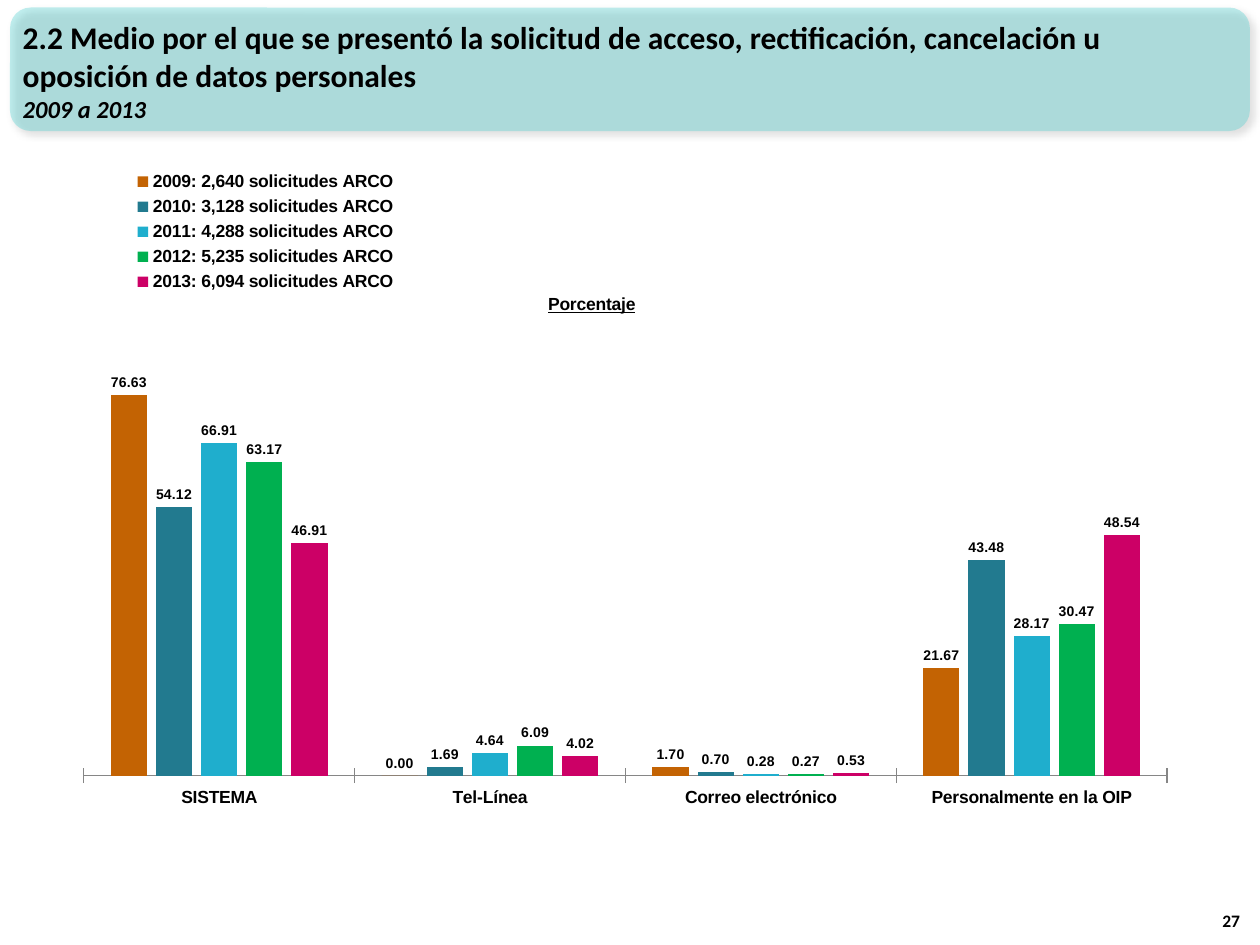
from lxml.etree import SubElement
from pptx import Presentation
from pptx.chart.data import CategoryChartData
from pptx.dml.color import RGBColor
from pptx.enum.chart import XL_CHART_TYPE, XL_LABEL_POSITION, XL_LEGEND_POSITION, XL_TICK_MARK
from pptx.enum.shapes import MSO_SHAPE
from pptx.enum.text import MSO_ANCHOR, PP_ALIGN
from pptx.oxml import parse_xml
from pptx.oxml.ns import nsdecls, qn
from pptx.util import Pt

CATEGORIES = ["SISTEMA", "Tel-Línea", "Correo electrónico", "Personalmente en la OIP"]
SERIES = [
    ("2009: 2,640 solicitudes ARCO", "C36303", (76.63, 0, 1.7, 21.67)),
    ("2010: 3,128 solicitudes ARCO", "227A8F", (54.12, 1.69, 0.7, 43.48)),
    ("2011: 4,288 solicitudes ARCO", "1FAECD", (66.91, 4.64, 0.28, 28.17)),
    ("2012: 5,235 solicitudes ARCO", "00B050", (63.17, 6.09, 0.27, 30.47)),
    ("2013: 6,094 solicitudes ARCO", "CC0066", (46.91, 4.02, 0.53, 48.54)),
]


def rgb(value):
    return RGBColor.from_string(value)


def place(sp, left, top, width, height):
    sp.left, sp.top, sp.width, sp.height = Pt(left), Pt(top), Pt(width), Pt(height)


def set_layout(parent, index, x, y, w=None, h=None, inner=False):
    for old in parent.findall(qn("c:layout")):
        parent.remove(old)
    layout = parse_xml(f"<c:layout {nsdecls('c')}><c:manualLayout/></c:layout>")
    values = [("layoutTarget", "inner" if inner else None), ("xMode", "edge"),
              ("yMode", "edge"), ("x", x), ("y", y), ("w", w), ("h", h)]
    for tag, value in values:
        if value is not None:
            SubElement(layout[0], qn(f"c:{tag}")).set("val", str(value))
    parent.insert(index, layout)


class SlideBuilder:
    text_font = "Calibri"
    chart_font = "Arial"
    ink = "000000"
    axis_color = "868686"
    number_format = "#,##0.00"

    def __init__(self, slide):
        self.s = slide

    def font(self, font, size, name, italic=None, underline=None):
        font.name, font.size, font.bold = name, Pt(size), True
        font.italic, font.underline = italic, underline
        font.color.rgb = rgb(self.ink)

    def panel(self, box, color, opacity):
        sp = self.s.shapes.add_shape(MSO_SHAPE.ROUNDED_RECTANGLE, 0, 0, 0, 0)
        place(sp, *box)
        sp.fill.solid()
        sp.fill.fore_color.rgb = rgb(color)
        sp.line.fill.background()
        fill = sp.element.spPr.find(qn("a:solidFill"))
        SubElement(fill[0], qn("a:alpha")).set("val", str(opacity * 1000))
        sp.element.spPr.append(parse_xml(
            f'<a:effectLst {nsdecls("a")}><a:outerShdw blurRad="{Pt(4)}" dist="{Pt(3)}" '
            f'dir="2700000" algn="tl" rotWithShape="0"><a:srgbClr val="{self.ink}">'
            '<a:alpha val="40000"/></a:srgbClr></a:outerShdw></a:effectLst>'))

    def title(self, box, heading, period):
        sp = self.s.shapes.title
        place(sp, *box)
        self.s.shapes.element.append(sp.element)
        tf = sp.text_frame
        tf.word_wrap = True
        tf.vertical_anchor = MSO_ANCHOR.MIDDLE
        tf.text = f"{heading}\n{period}"
        for p, size, italic in zip(tf.paragraphs, (18, 14), (False, True)):
            p.alignment = PP_ALIGN.LEFT
            p.space_before = Pt(0)
            self.font(p.runs[0].font, size, self.text_font, italic)

    def page_number(self, box, text):
        sp = self.s.shapes.add_textbox(0, 0, 0, 0)
        place(sp, *box)
        tf = sp.text_frame
        tf.word_wrap = True
        tf.vertical_anchor = MSO_ANCHOR.BOTTOM
        tf.text = text
        p = tf.paragraphs[0]
        p.alignment = PP_ALIGN.RIGHT
        self.font(p.runs[0].font, 10, self.text_font)

    def column_chart(self, box, title, categories, series):
        data = CategoryChartData(number_format=self.number_format)
        data.categories = categories
        for name, _, values in series:
            data.add_series(name, values)
        frame = self.s.shapes.add_chart(
            XL_CHART_TYPE.COLUMN_CLUSTERED, *map(Pt, box), data)
        chart = frame.chart
        self.font(chart.font, 10, self.chart_font)

        plot = chart.plots[0]
        plot.gap_width, plot.overlap, plot.vary_by_categories = 150, -25, False
        for ser, (_, color, _) in zip(plot.series, series):
            ser.format.fill.solid()
            ser.format.fill.fore_color.rgb = rgb(color)
            labels = ser.data_labels
            labels.show_value = True
            labels.position = XL_LABEL_POSITION.OUTSIDE_END
            labels.number_format = self.number_format
            labels.number_format_is_linked = False
            self.font(labels.font, 8, self.chart_font)

        axis = chart.category_axis
        axis.major_tick_mark = XL_TICK_MARK.CROSS
        axis.format.line.color.rgb = rgb(self.axis_color)
        axis = chart.value_axis
        axis.minimum_scale, axis.maximum_scale = 0, 90
        axis.has_major_gridlines = False
        axis.visible = False

        chart.has_title = True
        heading = chart.chart_title
        heading.text_frame.text = title
        self.font(heading.text_frame.paragraphs[0].runs[0].font, 10, self.chart_font,
                  underline=True)
        chart.has_legend = True
        chart.legend.position = XL_LEGEND_POSITION.TOP
        chart.legend.include_in_layout = False
        self.font(chart.legend.font, 10, self.chart_font)

        title_xml, legend_xml, plot_xml = (
            chart.element.find(f"{qn('c:chart')}/{qn(tag)}")
            for tag in ("c:title", "c:legend", "c:plotArea"))
        title_xml.find(qn("c:overlay")).set("val", "1")
        set_layout(title_xml, 1, 0.43, 0.2)
        set_layout(legend_xml, 1, 0.06, 0.03, 0.25, 0.18)
        set_layout(plot_xml, 0, 0.026, 0.254, 0.949, 0.617, inner=True)


def main():
    prs = Presentation()
    prs.slide_width, prs.slide_height = Pt(720), Pt(540)
    builder = SlideBuilder(prs.slides.add_slide(prs.slide_layouts[5]))
    builder.panel((5.76, 4.32, 708.48, 70.56), "33CCCC", 30)
    builder.title((5.76, 6.48, 660.24, 67.68),
                  "2.2 Medio por el que se presentó la solicitud de acceso, rectificación, "
                  "cancelación u oposición de datos personales", "2009 a 2013")
    builder.page_number((686.88, 506.88, 28.8, 28.8), "27")
    builder.column_chart((30.96, 82.8, 652.32, 414), "Porcentaje", CATEGORIES, SERIES)
    prs.save("out.pptx")


if __name__ == "__main__":
    main()
